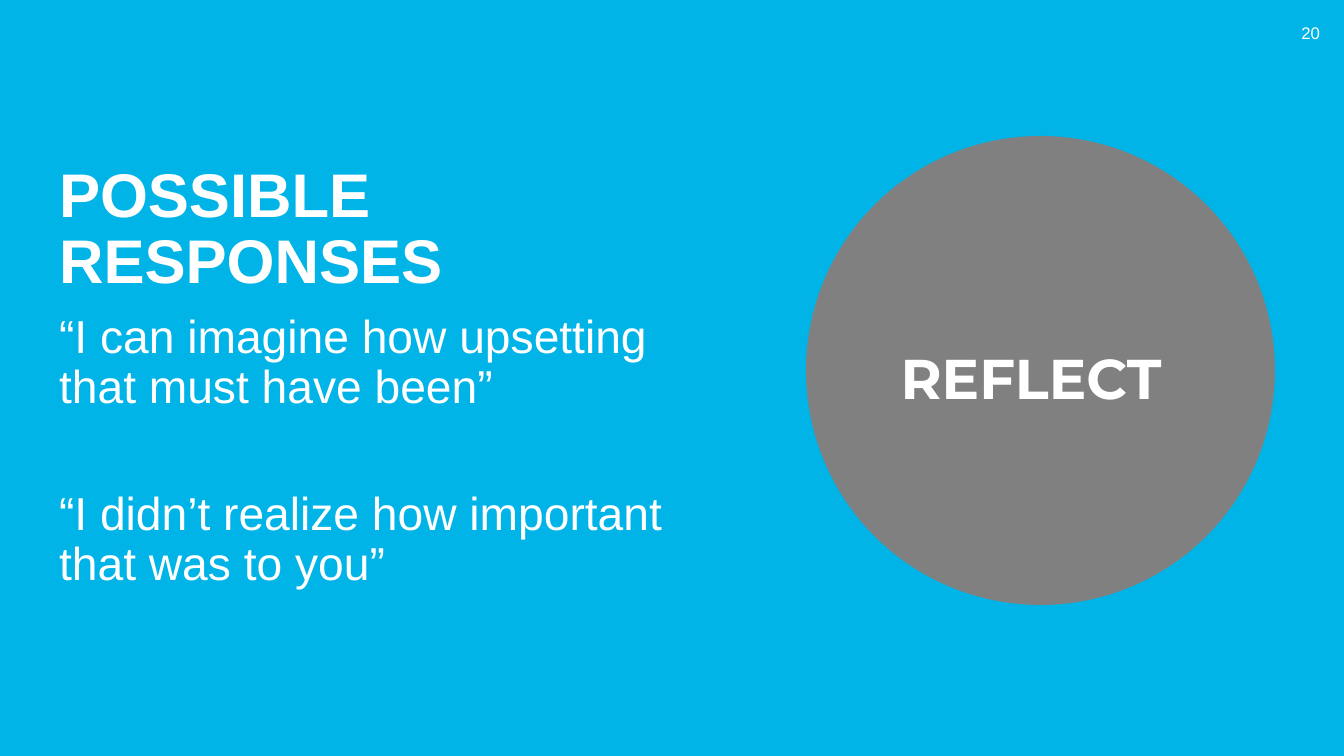
import pptx
import pptx.dml.color
import pptx.enum.shapes
import pptx.enum.text
import pptx.util
from lxml import etree

SCALE = 914400 / 100.8
WHITE = "FFFFFF"
ALIGN = pptx.enum.text.PP_ALIGN
ANCHOR = pptx.enum.text.MSO_ANCHOR
SHAPE = pptx.enum.shapes.MSO_SHAPE


def px(n):
    return pptx.util.Emu(round(n * SCALE))


def color(code):
    return pptx.dml.color.RGBColor.from_string(code)


def place(shape, box):
    shape.left, shape.top, shape.width, shape.height = map(px, box)


def plain(para):
    """Turn off the bullet and indent that the template gives."""
    props = para._p.get_or_add_pPr()
    props.set("marL", "0")
    props.set("indent", "0")
    etree.SubElement(props, pptx.oxml.ns.qn("a:buNone"))


def write(para, text, size, font="Arial", bold=False, align=ALIGN.LEFT):
    para.alignment = align
    run = para.add_run()
    run.text = text
    run.font.size = pptx.util.Pt(size)
    run.font.name = font
    run.font.bold = bold
    run.font.color.rgb = color(WHITE)


def fill(holder, box, lines, size, anchor, bold=False, gap=10):
    """Move a placeholder and write its paragraphs, gap points apart."""
    place(holder, box)
    frame = holder.text_frame
    frame.word_wrap = True
    frame.auto_size = pptx.enum.text.MSO_AUTO_SIZE.NONE
    frame.vertical_anchor = anchor
    for i, line in enumerate(lines):
        para = frame.add_paragraph() if i else frame.paragraphs[0]
        para.line_spacing = 0.9
        para.space_before = pptx.util.Pt(gap if i else 10)
        plain(para)
        write(para, line, size, bold=bold)


def label(slide, box, text, size, anchor, **style):
    frame = slide.shapes.add_textbox(*map(px, box)).text_frame
    frame.word_wrap = True
    frame.vertical_anchor = anchor
    write(frame.paragraphs[0], text, size, **style)


def block(slide, kind, box, code):
    shape = slide.shapes.add_shape(kind, *map(px, box))
    shape.shadow.inherit = False
    shape.fill.solid()
    shape.fill.fore_color.rgb = color(code)
    shape.line.fill.background()
    return shape


def main():
    deck = pptx.Presentation()
    deck.slide_width, deck.slide_height = px(1344), px(756)
    slide = deck.slides.add_slide(deck.slide_layouts[1])

    back = block(slide, SHAPE.RECTANGLE, (0, 0, 1344, 756), "01B4E7")
    slide.shapes._spTree.insert(2, back._element)

    title, body = slide.placeholders
    fill(title, (49, 177, 651, 125), ["POSSIBLE RESPONSES"], 44,
         ANCHOR.BOTTOM, bold=True)
    quotes = ["“I can imagine how upsetting that must have been”",
              "“I didn’t realize how important that was to you”"]
    fill(body, (49, 309, 639, 306), quotes, 33, ANCHOR.TOP, gap=55)

    label(slide, (1284, 13, 46, 40), "20", 12, ANCHOR.MIDDLE,
          align=ALIGN.RIGHT)
    block(slide, SHAPE.OVAL, (806, 136, 469, 469), "808080")
    label(slide, (815, 339, 448, 78), "REFLECT ", 40, ANCHOR.TOP,
          font="Montserrat", bold=True, align=ALIGN.CENTER)
    deck.save("out.pptx")


if __name__ == "__main__":
    main()
